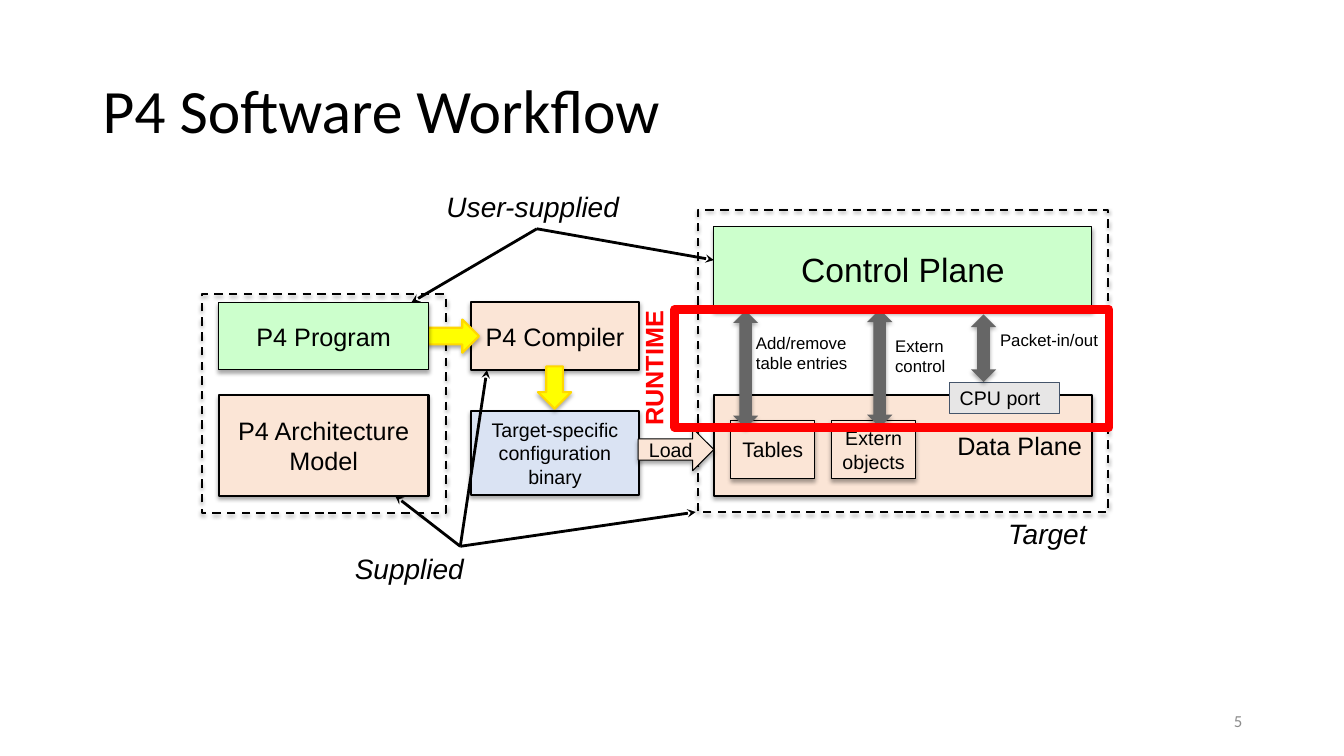
"""Build the P4 software workflow slide."""
from dataclasses import dataclass
from typing import Optional

from lxml import etree
from pptx import Presentation
from pptx import util as u
from pptx.dml.color import RGBColor
from pptx.enum import dml, shapes, text
from pptx.oxml.ns import qn

SCALE = 9144
BLACK, RED, GREY = "000000", "FF0000", "666666"
PEACH, GREEN, BLUE = "FBE5D6", "CCFFCC", "DAE3F3"
YELLOW, GOLD = "FFFF00", "FFD800"
RECT = shapes.MSO_SHAPE.RECTANGLE
RIGHT = shapes.MSO_SHAPE.RIGHT_ARROW
BOTH = shapes.MSO_SHAPE.UP_DOWN_ARROW
LEFT, MID, END = text.PP_ALIGN.LEFT, text.PP_ALIGN.CENTER, text.PP_ALIGN.RIGHT
TOP, HALF = text.MSO_ANCHOR.TOP, text.MSO_ANCHOR.MIDDLE


@dataclass
class Words:
    """Styled text inside a box."""
    body: str
    size: float
    align: text.PP_ALIGN = MID
    anchor: text.MSO_ANCHOR = HALF
    font: str = "Arial"
    tone: str = BLACK
    bold: bool = False
    slant: bool = False
    pad: int = 5
    lead: float = 1.0


@dataclass
class Box:
    """A preset shape, or a text box when kind is None."""
    x: int
    y: int
    w: int
    h: int
    words: Optional[Words] = None
    fill: Optional[str] = None
    pen: Optional[str] = BLACK
    width: float = 1.5
    kind: Optional[shapes.MSO_SHAPE] = RECT
    dash: bool = False
    shade: bool = True
    turn: int = 0


@dataclass
class Arrow:
    """A pointer from the side of a label to a point."""
    label: str
    side: int
    x: int
    y: int


def px(n: float) -> u.Emu:
    """Turn px into EMU."""
    return u.Emu(round(n * SCALE))


def tint(code: str) -> RGBColor:
    """Turn a hex string into a colour."""
    return RGBColor.from_string(code)


def write(frame, words: Words) -> None:
    """Fill a text frame."""
    frame.word_wrap = True
    frame.vertical_anchor = words.anchor
    frame.margin_left = frame.margin_right = px(10)
    frame.margin_top = frame.margin_bottom = px(words.pad)
    frame.text = words.body
    for para in frame.paragraphs:
        para.alignment = words.align
        para.line_spacing = words.lead
        font = para.font
        font.name, font.size = words.font, u.Pt(words.size)
        font.bold, font.italic = words.bold, words.slant
        font.color.rgb = tint(words.tone)


def shadow(shape) -> None:
    """Add a soft black shadow below a shape."""
    effects = shape._element.spPr.find(qn("a:effectLst"))
    outer = etree.SubElement(effects, qn("a:outerShdw"), blurRad=str(u.Pt(3.1)),
                             dist=str(u.Pt(1.8)), dir="5400000", rotWithShape="0")
    hue = etree.SubElement(outer, qn("a:srgbClr"), val=BLACK)
    etree.SubElement(hue, qn("a:alpha"), val="34000")


def draw(slide, box: Box):
    """Draw one box and return its shape."""
    area = [px(n) for n in (box.x, box.y, box.w, box.h)]
    if box.kind is None:
        shape = slide.shapes.add_textbox(*area)
    else:
        shape = slide.shapes.add_shape(box.kind, *area)
        shape.shadow.inherit = False
        if box.shade:
            shadow(shape)
        if box.fill:
            shape.fill.solid()
            shape.fill.fore_color.rgb = tint(box.fill)
        else:
            shape.fill.background()
        if box.pen:
            shape.line.color.rgb = tint(box.pen)
            shape.line.width = u.Pt(box.width)
        else:
            shape.line.fill.background()
        if box.dash:
            shape.line.dash_style = dml.MSO_LINE.DASH
    shape.rotation = box.turn
    if box.words:
        write(shape.text_frame, box.words)
    return shape


def point(slide, arrow: Arrow, label) -> None:
    """Draw an arrow that starts at a label."""
    end = px(arrow.x), px(arrow.y)
    line = slide.shapes.add_connector(shapes.MSO_CONNECTOR.STRAIGHT, *end, *end)
    line.begin_connect(label, arrow.side)
    line.line.color.rgb = tint(BLACK)
    line.line.width = u.Pt(2)
    etree.SubElement(line.line._get_or_add_ln(), qn("a:tailEnd"), type="stealth")
    etree.SubElement(line._element.spPr, qn("a:effectLst"))


def label(x: int, y: int, w: int, body: str) -> Box:
    """Make a large italic label."""
    return Box(x, y, w, 44, Words(body, 20, LEFT, TOP, slant=True), kind=None)


def note(x: int, y: int, w: int, body: str) -> Box:
    """Make a small note beside a runtime arrow."""
    return Box(x, y, w, 55, Words(body, 12, LEFT, TOP, pad=10), kind=None)


def link(x: int, y: int, h: int) -> Box:
    """Make a grey two-way arrow."""
    return Box(x, y, 25, h, fill=GREY, pen=None, kind=BOTH)


ITEMS = [
    Box(92, 40, 1150, 145, Words("P4 Software Workflow", 44, LEFT, font="Calibri", lead=0.9),
        kind=None),
    Box(942, 695, 300, 40, Words("5", 12, END, font="Calibri", tone="8C8C8C"), kind=None),
    Box(200, 292, 242, 217, dash=True),
    Box(692, 208, 407, 300, dash=True),
    Box(217, 392, 208, 100, Words("P4 Architecture\nModel", 18), PEACH),
    Box(467, 300, 167, 67, Words("P4 Compiler", 18), PEACH),
    Box(417, 317, 58, 33, fill=YELLOW, pen=GOLD, kind=RIGHT),
    Box(467, 408, 167, 83, Words("Target-specific configuration binary", 14), BLUE),
    Box(529, 368, 42, 33, fill=YELLOW, pen=GOLD, kind=RIGHT, turn=90),
    Box(708, 392, 375, 100, Words("Data Plane", 18, END), PEACH),
    Box(725, 417, 83, 58, Words("Tables", 15), PEACH, width=0.75),
    Box(825, 417, 83, 58, Words("Extern\nobjects", 14), PEACH, width=0.75),
    Box(633, 425, 75, 42, Words("Load", 14), PEACH, width=0.75, kind=RIGHT),
    label(990, 508, 109, "Target"),
    label(342, 542, 229, "Supplied"),
    Arrow("Supplied", 0, 392, 492),
    Arrow("Supplied", 0, 483, 367),
    Arrow("Supplied", 0, 690, 508),
    Box(217, 300, 208, 67, Words("P4 Program", 18), GREEN, width=0.75),
    label(433, 183, 199, "User-supplied"),
    Arrow("User-supplied", 2, 408, 300),
    Box(708, 225, 375, 83, Words("Control Plane", 24), GREEN, width=0.75),
    link(727, 308, 117),
    link(860, 307, 117),
    Arrow("User-supplied", 2, 708, 258),
    note(740, 320, 117, "Add/remove\vtable entries"),
    Box(942, 379, 109, 31, Words("CPU port", 14, LEFT, pad=10), "E7E6E6", "44546A", 0.75,
        shade=False),
    link(963, 312, 67),
    note(982, 317, 135, "Packet-in/out"),
    note(878, 323, 83, "Extern\vcontrol"),
    Box(571, 330, 154, 50, Words("RUNTIME", 18, LEFT, TOP, tone=RED, bold=True, pad=10),
        kind=None, turn=270),
    Box(669, 307, 431, 117, pen=RED, width=6, shade=False),
]


def main() -> None:
    """Build and save the slide."""
    deck = Presentation()
    deck.slide_width, deck.slide_height = px(1333), px(750)
    slide = deck.slides.add_slide(deck.slide_layouts[6])
    drawn = {}
    for item in ITEMS:
        if isinstance(item, Arrow):
            point(slide, item, drawn[item.label])
        else:
            shape = draw(slide, item)
            if item.words:
                drawn[item.words.body] = shape
    deck.save("out.pptx")


if __name__ == "__main__":
    main()
